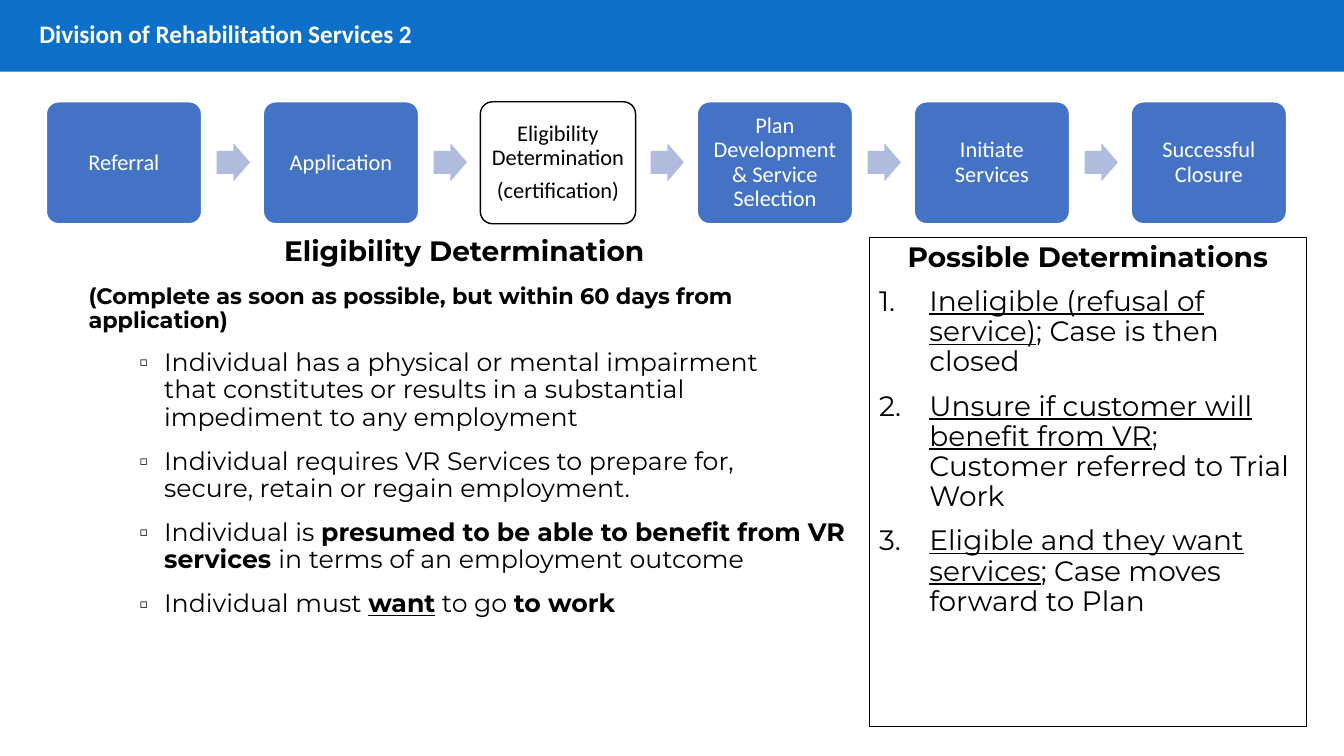
from dataclasses import dataclass

from lxml import etree
from pptx import Presentation
from pptx.dml.color import RGBColor
from pptx.enum.shapes import MSO_SHAPE
from pptx.enum.text import MSO_ANCHOR, PP_ALIGN
from pptx.oxml.ns import qn
from pptx.util import Inches, Pt

RECTANGLE = MSO_SHAPE.RECTANGLE
ROUNDED = MSO_SHAPE.ROUNDED_RECTANGLE
ARROW = MSO_SHAPE.RIGHT_ARROW
TOP, MIDDLE = MSO_ANCHOR.TOP, MSO_ANCHOR.MIDDLE
LEFT, CENTER = PP_ALIGN.LEFT, PP_ALIGN.CENTER
HARD_SPACE = chr(160)  # keeps neighbouring words on one line


@dataclass(frozen=True)
class Theme:
    banner: str = "0C70C8"
    step: str = "4472C4"
    arrow: str = "B0BCDE"
    white: str = "FFFFFF"
    black: str = "000000"
    label_font: str = "Calibri"
    text_font: str = "Montserrat"
    heading_size: int = 20
    body_size: int = 18
    label_size: int = 16
    line_spacing: float = 0.9


THEME = Theme()


@dataclass(frozen=True)
class Span:
    text: str
    bold: bool = False
    underline: bool = False


@dataclass(frozen=True)
class Para:
    spans: tuple[Span, ...]
    size: int
    align: PP_ALIGN = LEFT
    marker: str = ""
    indent: float = 0
    hanging: float = 0


@dataclass(frozen=True)
class Step:
    lines: tuple[str, ...]
    current: bool = False


STEPS = (
    Step(("Referral",)),
    Step(("Application",)),
    Step(("Eligibility Determination", "(certification)"), current=True),
    Step(("Plan Development & Service Selection",)),
    Step(("Initiate Services",)),
    Step(("Successful Closure",)),
)
FIRST_STEP, LAST_STEP = 0.46, 11.22
STEP_PITCH = (LAST_STEP - FIRST_STEP) / (len(STEPS) - 1)
ARROW_OFFSET = 1.69


def criterion(*spans: Span) -> Para:
    return Para(spans, THEME.body_size, marker="□", indent=0.75, hanging=0.25)


def outcome(decision: str, consequence: str) -> Para:
    spans = (Span(decision, underline=True), Span(consequence))
    return Para(spans, THEME.heading_size, marker="1.", indent=0.5, hanging=0.5)


def heading(text: str) -> Para:
    return Para((Span(text, bold=True),), THEME.heading_size, CENTER)


ELIGIBILITY = (
    heading(f"Eligibility Determination{HARD_SPACE}"),
    Para((Span("(Complete as soon as possible, but within 60 days from application)",
               bold=True),), THEME.label_size),
    criterion(Span(f"Individual has a physical or mental impairment that{HARD_SPACE}constitutes "
                   f"or results in a substantial impediment to{HARD_SPACE}any employment")),
    criterion(Span("Individual requires VR Services to prepare for, "
                   f"secure,{HARD_SPACE}retain or regain employment.")),
    criterion(Span(f"Individual is{HARD_SPACE}"),
              Span(f"presumed to be able to benefit from{HARD_SPACE}VR services{HARD_SPACE}",
                   bold=True),
              Span("in terms of an employment outcome")),
    criterion(Span("Individual must "), Span("want", bold=True, underline=True),
              Span(" to go "), Span("to work", bold=True)),
)
DETERMINATIONS = (
    heading("Possible Determinations"),
    outcome("Ineligible (refusal of service)", "; Case is then closed"),
    outcome("Unsure if customer will benefit from VR", "; Customer referred to Trial Work"),
    outcome("Eligible and they want services", f"; Case moves forward to Plan{HARD_SPACE}"),
)


def rgb(value: str) -> RGBColor:
    return RGBColor.from_string(value)


def style_font(font, name: str, size: int, color: str, bold: bool = False) -> None:
    font.name, font.size, font.bold = name, Pt(size), bold
    font.color.rgb = rgb(color)


def add_block(slide, kind, left: float, top: float, width: float, height: float,
              fill: str = "", line: str = "", line_width: float = 1):
    block = slide.shapes.add_shape(
        kind, Inches(left), Inches(top), Inches(width), Inches(height))
    block.shadow.inherit = False
    if fill:
        block.fill.solid()
        block.fill.fore_color.rgb = rgb(fill)
    else:
        block.fill.background()
    if line:
        block.line.color.rgb = rgb(line)
        block.line.width = Pt(line_width)
    else:
        block.line.fill.background()
    return block


def add_marker(paragraph, item: Para) -> None:
    properties = paragraph._p.get_or_add_pPr()
    properties.set("marL", str(Inches(item.indent)))
    properties.set("indent", str(-Inches(item.hanging)))
    if item.marker == "1.":
        etree.SubElement(properties, qn("a:buAutoNum"), type="arabicPeriod")
    else:
        etree.SubElement(properties, qn("a:buSzPct"), val="65000")
        etree.SubElement(properties, qn("a:buFont"), typeface=THEME.text_font)
        etree.SubElement(properties, qn("a:buChar"), char=item.marker)


def write_paragraphs(frame, items: tuple[Para, ...], before: int, after: int) -> None:
    frame.word_wrap = True
    frame.vertical_anchor = TOP
    for index, item in enumerate(items):
        paragraph = frame.add_paragraph() if index else frame.paragraphs[0]
        if item.marker:
            add_marker(paragraph, item)
        paragraph.alignment = item.align
        paragraph.line_spacing = THEME.line_spacing
        paragraph.space_before = Pt(before if index else 0)
        paragraph.space_after = Pt(after)
        for span in item.spans:
            run = paragraph.add_run()
            run.text = span.text
            style_font(run.font, THEME.text_font, item.size, THEME.black, span.bold)
            run.font.underline = span.underline


def add_title(slide, text: str) -> None:
    banner = add_block(slide, RECTANGLE, 0, 0, 13.33, 0.71, THEME.banner)
    title = slide.shapes.title
    title._element.addprevious(banner._element)
    title.left, title.top = Inches(0.29), Inches(0.16)
    title.width, title.height = Inches(7.55), Inches(0.38)
    frame = title.text_frame
    frame.text = text
    frame.vertical_anchor = MIDDLE
    frame.paragraphs[0].alignment = LEFT
    frame.paragraphs[0].line_spacing = THEME.line_spacing
    style_font(frame.paragraphs[0].runs[0].font, THEME.label_font,
               THEME.body_size, THEME.white, True)


def add_step(slide, step: Step, left: float) -> None:
    fill, ink = (THEME.white, THEME.black) if step.current else (THEME.step, THEME.white)
    box = add_block(slide, ROUNDED, left, 1.01, 1.54, 1.21, fill, ink)
    box.adjustments[0] = 0.1
    frame = box.text_frame
    frame.word_wrap = True
    frame.vertical_anchor = MIDDLE
    frame.margin_left = frame.margin_right = Inches(0.06)
    frame.text = "\n".join(step.lines)
    for paragraph in frame.paragraphs:
        paragraph.alignment = CENTER
        paragraph.line_spacing = THEME.line_spacing
        paragraph.space_after = Pt(6)
        style_font(paragraph.runs[0].font, THEME.label_font, THEME.label_size, ink)


def main() -> None:
    deck = Presentation()
    deck.slide_width, deck.slide_height = Inches(13.33), Inches(7.5)
    slide = deck.slides.add_slide(deck.slide_layouts[5])
    add_title(slide, "Division of Rehabilitation Services 2")

    # Process steps with an arrow between neighbours
    for index, step in enumerate(STEPS):
        left = FIRST_STEP + index * STEP_PITCH
        add_step(slide, step, left)
        if index < len(STEPS) - 1:
            arrow = add_block(slide, ARROW, left + ARROW_OFFSET, 1.42, 0.33, 0.38, THEME.arrow)
            arrow.adjustments[0] = 0.6

    # Eligibility criteria
    criteria = slide.shapes.add_textbox(Inches(0.78), Inches(2.31), Inches(7.73), Inches(4.04))
    write_paragraphs(criteria.text_frame, ELIGIBILITY, before=6, after=6)

    # Possible determinations
    panel = add_block(slide, RECTANGLE, 8.62, 2.36, 4.34, 4.85, "", THEME.black, 0.75)
    write_paragraphs(panel.text_frame, DETERMINATIONS, before=10, after=0)

    deck.save("out.pptx")


if __name__ == "__main__":
    main()
